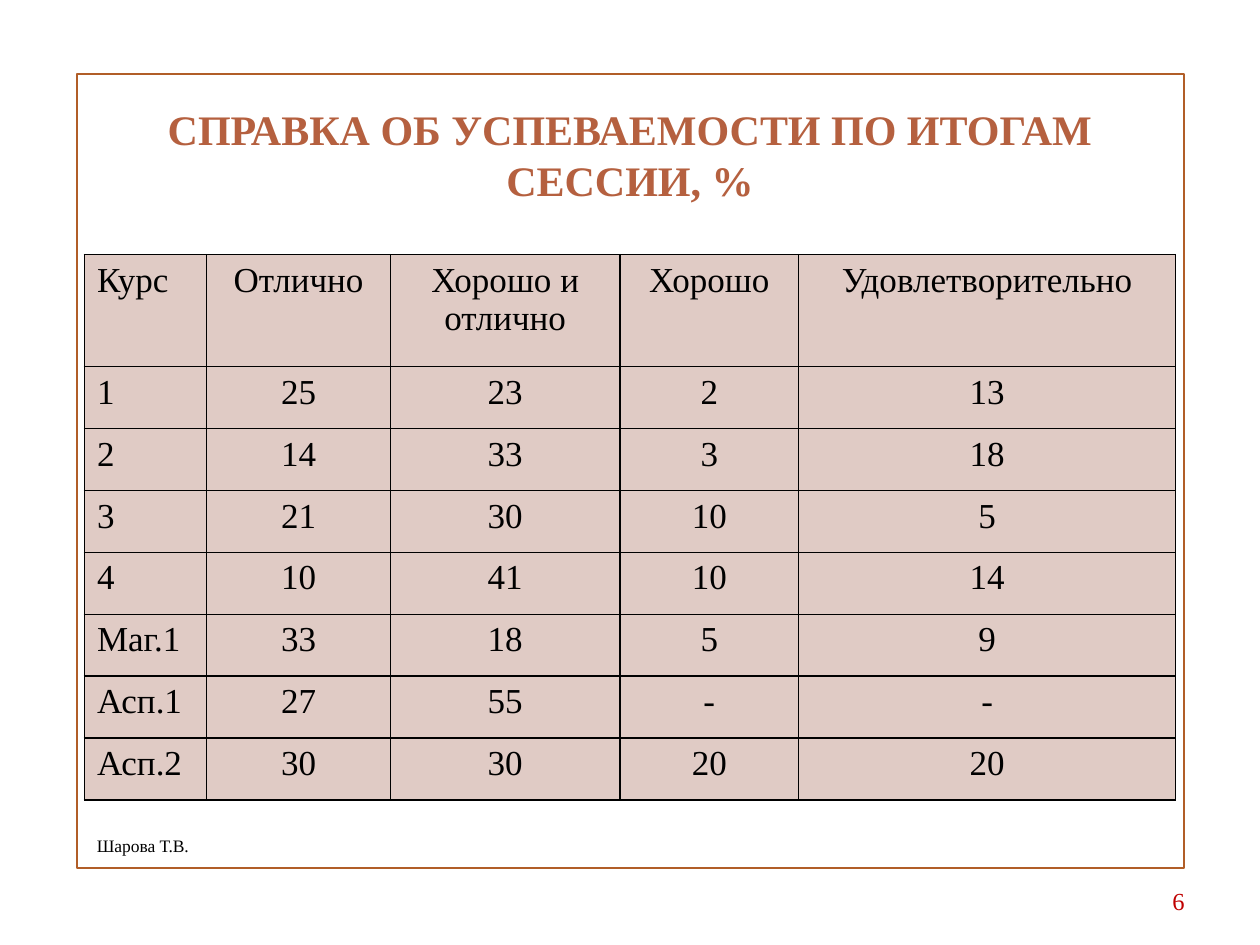
from dataclasses import dataclass

from lxml.etree import SubElement
from pptx import Presentation
from pptx.dml.color import RGBColor
from pptx.enum.shapes import MSO_SHAPE
from pptx.enum.text import MSO_ANCHOR, PP_ALIGN
from pptx.oxml.ns import qn
from pptx.util import Inches, Pt


@dataclass(frozen=True)
class Theme:
    font: str = "Times New Roman"
    title: str = "B5603F"
    frame: str = "B15E28"
    cell: str = "E0CBC5"
    text: str = "000000"
    number: str = "C00000"
    title_size: int = 24
    table_size: int = 20
    number_size: int = 14
    footer_size: int = 10


THEME = Theme()

COL_WIDTHS = [0.97, 1.46, 1.82, 1.42, 2.99]
HEADER_HEIGHT = 0.89
TABLE_HEIGHT = 4.33
GRADES = [
    ["Курс", "Отлично", "Хорошо и отлично", "Хорошо", "Удовлетворительно"],
    ["1", "25", "23", "2", "13"],
    ["2", "14", "33", "3", "18"],
    ["3", "21", "30", "10", "5"],
    ["4", "10", "41", "10", "14"],
    ["Маг.1", "33", "18", "5", "9"],
    ["Асп.1", "27", "55", "-", "-"],
    ["Асп.2", "30", "30", "20", "20"],
]


def style_paragraph(p, size, color, align, bold=False):
    p.alignment = align
    p.font.name = THEME.font
    p.font.size = Pt(size)
    p.font.bold = bold
    p.font.color.rgb = RGBColor.from_string(color)


def add_frame(s, left, top, width, height):
    frame = s.shapes.add_shape(MSO_SHAPE.RECTANGLE, Inches(left), Inches(top),
                               Inches(width), Inches(height))
    frame.shadow.inherit = False
    frame.fill.background()
    frame.line.color.rgb = RGBColor.from_string(THEME.frame)
    frame.line.width = Pt(1.25)


def add_text(s, text, left, top, width, height, size, color,
             align=PP_ALIGN.LEFT, bold=False):
    sp = s.shapes.add_textbox(Inches(left), Inches(top), Inches(width), Inches(height))
    tf = sp.text_frame
    tf.word_wrap = True
    tf.vertical_anchor = MSO_ANCHOR.MIDDLE
    tf.text = text
    style_paragraph(tf.paragraphs[0], size, color, align, bold)


def set_borders(cell):
    tc_pr = cell._tc.get_or_add_tcPr()
    for i, side in enumerate(("a:lnL", "a:lnR", "a:lnT", "a:lnB")):
        ln = SubElement(tc_pr, qn(side), w=str(Pt(1)))
        fill = SubElement(ln, qn("a:solidFill"))
        SubElement(fill, qn("a:srgbClr"), val=THEME.text)
        # Borders come before the cell fill
        tc_pr.insert(i, ln)


def add_grades_table(s, left, top):
    table = s.shapes.add_table(len(GRADES), len(COL_WIDTHS), Inches(left), Inches(top),
                               Inches(sum(COL_WIDTHS)), Inches(TABLE_HEIGHT)).table
    for column, width in zip(table.columns, COL_WIDTHS):
        column.width = Inches(width)
    body_height = (TABLE_HEIGHT - HEADER_HEIGHT) / (len(GRADES) - 1)
    for r, values in enumerate(GRADES):
        table.rows[r].height = Inches(body_height if r else HEADER_HEIGHT)
        for c, value in enumerate(values):
            cell = table.cell(r, c)
            cell.text = value
            cell.fill.solid()
            cell.fill.fore_color.rgb = RGBColor.from_string(THEME.cell)
            style_paragraph(cell.text_frame.paragraphs[0], THEME.table_size, THEME.text,
                            PP_ALIGN.CENTER if c else PP_ALIGN.LEFT)
            set_borders(cell)


def main():
    prs = Presentation()
    prs.slide_width, prs.slide_height = Inches(10), Inches(7.5)
    s = prs.slides.add_slide(prs.slide_layouts[6])

    # Frame and title
    add_frame(s, 0.61, 0.59, 8.79, 6.3)
    add_text(s, "СПРАВКА ОБ УСПЕВАЕМОСТИ ПО ИТОГАМ СЕССИИ, %", 0.5, 0.68, 9, 1.09,
             THEME.title_size, THEME.title, PP_ALIGN.CENTER, bold=True)

    # Results by year of study
    add_grades_table(s, 0.67, 2.02)

    # Slide number and author
    add_text(s, "6", 7.17, 6.95, 2.33, 0.4, THEME.number_size, THEME.number, PP_ALIGN.RIGHT)
    add_text(s, "Шарова Т.В.", 0.67, 6.51, 3.17, 0.4, THEME.footer_size, THEME.text)

    prs.save("out.pptx")


if __name__ == "__main__":
    main()
